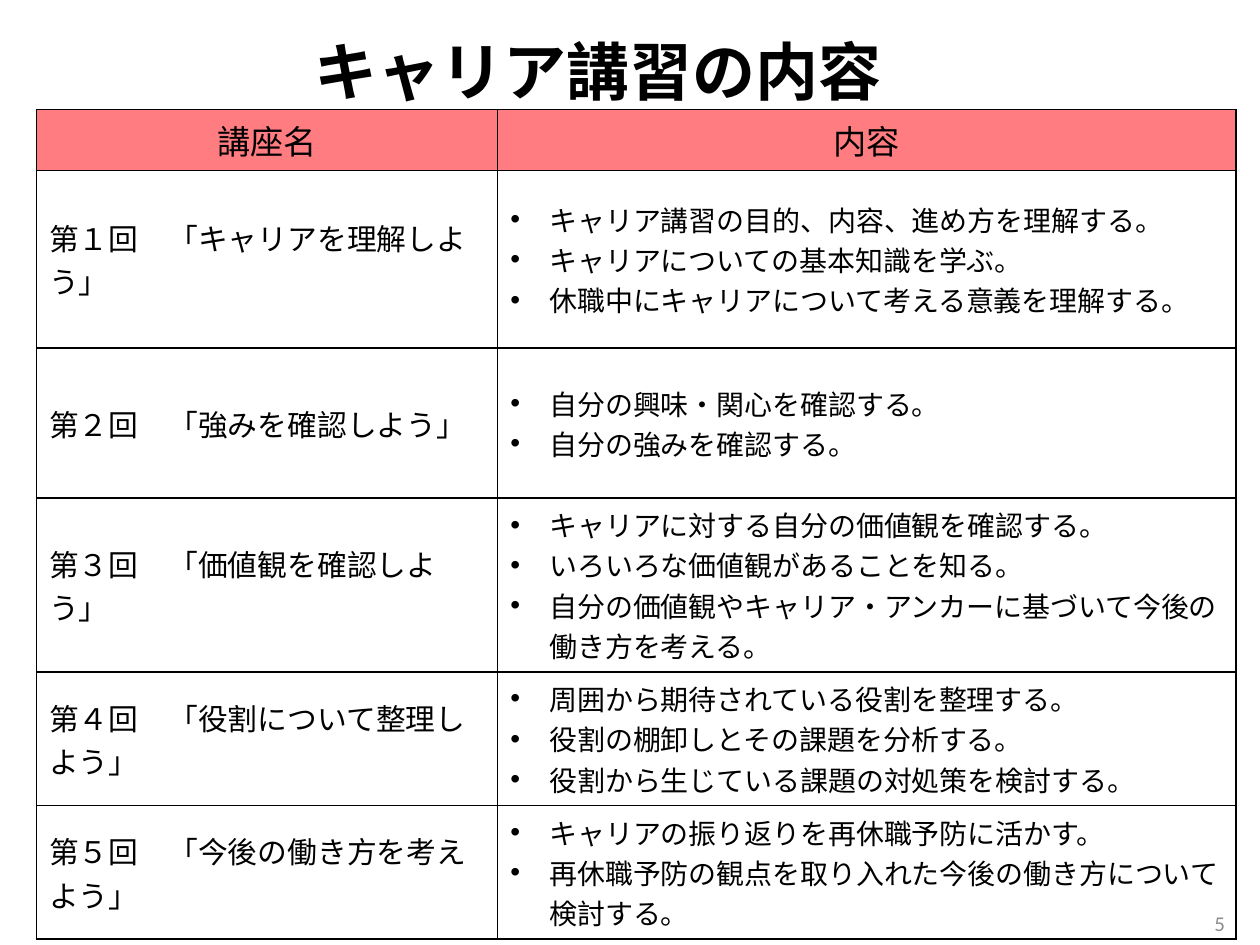
from lxml import etree
from pptx import Presentation
from pptx.dml.color import RGBColor
from pptx.enum.text import MSO_ANCHOR, PP_ALIGN
from pptx.oxml.ns import qn
from pptx.util import Inches, Pt

LEFT, CENTER, RIGHT = PP_ALIGN.LEFT, PP_ALIGN.CENTER, PP_ALIGN.RIGHT
MIDDLE = MSO_ANCHOR.MIDDLE

TITLE = "キャリア講習の内容　"
PAGE_NUMBER = "5"
HEADERS = ["講座名", "内容"]
COURSES = [
    ("第１回　「キャリアを理解しよう」", [
        "キャリア講習の目的、内容、進め方を理解する。",
        "キャリアについての基本知識を学ぶ。",
        "休職中にキャリアについて考える意義を理解する。",
    ]),
    ("第２回　「強みを確認しよう」", [
        "自分の興味・関心を確認する。",
        "自分の強みを確認する。",
    ]),
    ("第３回　「価値観を確認しよう」", [
        "キャリアに対する自分の価値観を確認する。",
        "いろいろな価値観があることを知る。",
        "自分の価値観やキャリア・アンカーに基づいて今後の働き方を考える。",
    ]),
    ("第４回　「役割について整理しよう」", [
        "周囲から期待されている役割を整理する。",
        "役割の棚卸しとその課題を分析する。",
        "役割から生じている課題の対処策を検討する。",
    ]),
    ("第５回　「今後の働き方を考えよう」", [
        "キャリアの振り返りを再休職予防に活かす。",
        "再休職予防の観点を取り入れた今後の働き方について検討する。",
    ]),
]

FONT = "Calibri"
COLORS = {"text": "000000", "header": "FF7C80", "border": "000000", "number": "8C8C8C"}
SIZES = {"title": 36, "header": 19, "course": 17, "topic": 16, "number": 12}
SLIDE_WIDTH, SLIDE_HEIGHT = 10, 7.5
TABLE_LEFT, TABLE_TOP = 0.29, 0.87
COLUMN_WIDTHS = [3.66, 5.86]
ROW_HEIGHTS = [0.47, 1.41, 1.19, 1.08, 0.89, 0.95]
BULLET_INDENT = 0.31
BORDER_WIDTH = 1


def write_lines(frame, lines, size, align=LEFT, color="text", bold=False, bullets=False):
    frame.word_wrap = True
    for index, line in enumerate(lines):
        para = frame.add_paragraph() if index else frame.paragraphs[0]
        para.alignment = align
        if bullets:
            add_bullet(para)
        span = para.add_run()
        span.text = line
        span.font.name = FONT
        span.font.size = Pt(SIZES[size])
        span.font.bold = bold
        span.font.color.rgb = RGBColor.from_string(COLORS[color])


def add_bullet(para):
    properties = para._p.get_or_add_pPr()
    properties.set("marL", str(Inches(BULLET_INDENT)))
    properties.set("indent", str(-Inches(BULLET_INDENT)))
    etree.SubElement(properties, qn("a:buFont"), typeface="Arial")
    etree.SubElement(properties, qn("a:buChar"), char="•")


def add_borders(cell):
    properties = cell._tc.get_or_add_tcPr()
    for side in ("lnL", "lnR", "lnT", "lnB"):
        line = etree.SubElement(properties, qn("a:" + side), w=str(Pt(BORDER_WIDTH)))
        fill = etree.SubElement(line, qn("a:solidFill"))
        etree.SubElement(fill, qn("a:srgbClr"), val=COLORS["border"])


def add_text(page, area, text, size, **style):
    box = page.shapes.add_textbox(*(Inches(length) for length in area))
    box.text_frame.vertical_anchor = MIDDLE
    write_lines(box.text_frame, [text], size, **style)


def add_course_table(page):
    frame = page.shapes.add_table(
        len(ROW_HEIGHTS), len(COLUMN_WIDTHS), Inches(TABLE_LEFT), Inches(TABLE_TOP),
        Inches(sum(COLUMN_WIDTHS)), Inches(sum(ROW_HEIGHTS)))
    table = frame.table
    table.first_row = table.horz_banding = False
    for column, width in zip(table.columns, COLUMN_WIDTHS):
        column.width = Inches(width)
    for row, height in zip(table.rows, ROW_HEIGHTS):
        row.height = Inches(height)
    for cell in table.iter_cells():
        cell.vertical_anchor = MIDDLE
        add_borders(cell)
        cell.fill.background()
    for column, header in enumerate(HEADERS):
        cell = table.cell(0, column)
        cell.fill.solid()
        cell.fill.fore_color.rgb = RGBColor.from_string(COLORS["header"])
        write_lines(cell.text_frame, [header], "header", align=CENTER)
    for row, (course, topics) in enumerate(COURSES, start=1):
        write_lines(table.cell(row, 0).text_frame, [course], "course")
        write_lines(table.cell(row, 1).text_frame, topics, "topic", bullets=True)


def main():
    deck = Presentation()
    deck.slide_width, deck.slide_height = Inches(SLIDE_WIDTH), Inches(SLIDE_HEIGHT)
    page = deck.slides.add_slide(deck.slide_layouts[6])
    add_course_table(page)
    add_text(page, (7.49, 7.13, 2.33, 0.4), PAGE_NUMBER, "number", align=RIGHT, color="number")
    add_text(page, (0, 0.16, SLIDE_WIDTH, 0.8), TITLE, "title", align=CENTER, bold=True)
    deck.save("out.pptx")


if __name__ == "__main__":
    main()
